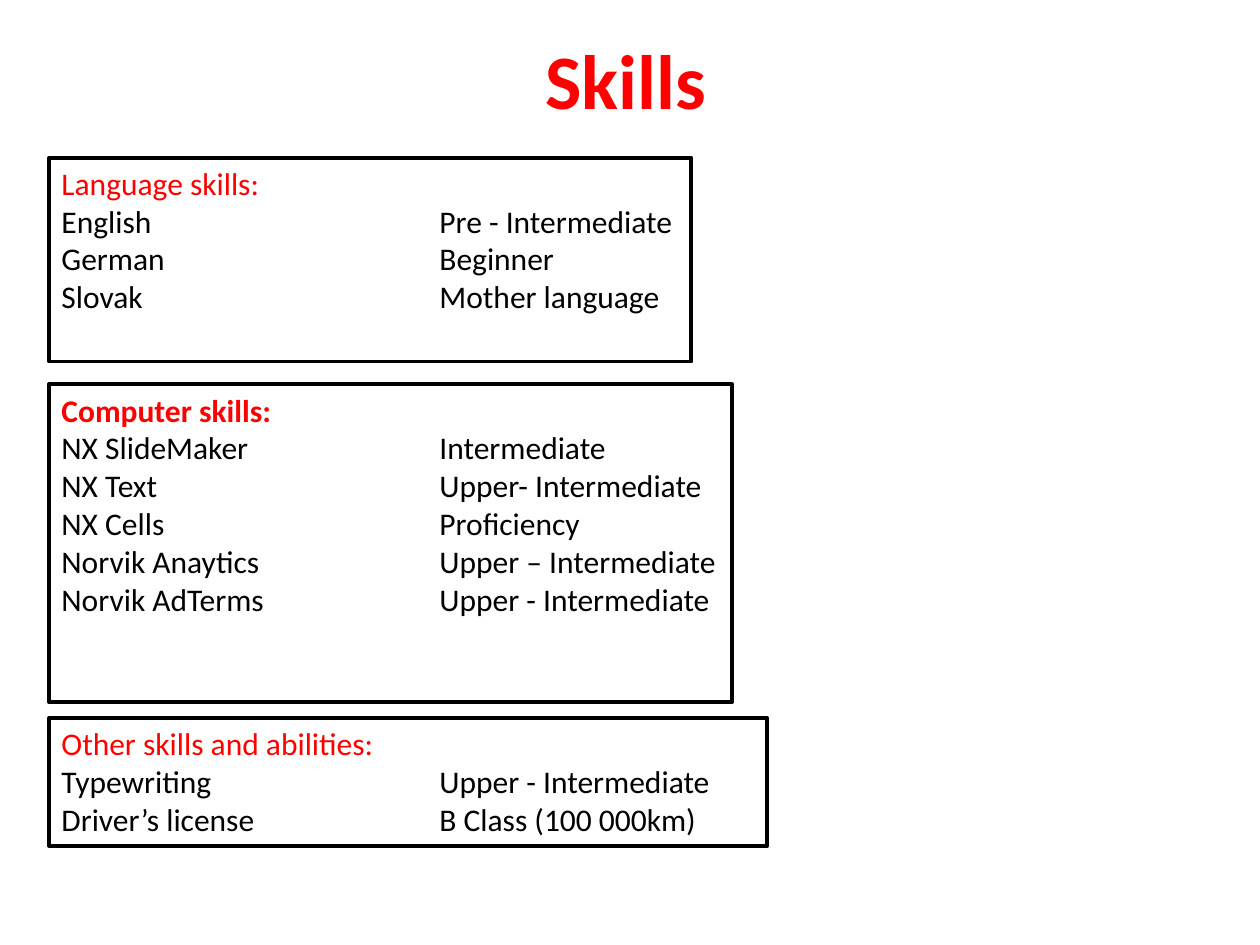
from lxml import etree
from pptx import Presentation
from pptx.dml.color import RGBColor
from pptx.enum.text import MSO_ANCHOR, MSO_AUTO_SIZE, PP_ALIGN
from pptx.oxml.ns import qn
from pptx.util import Cm, Pt

CENTER = PP_ALIGN.CENTER
TOP = MSO_ANCHOR.TOP
MIDDLE = MSO_ANCHOR.MIDDLE
NO_AUTOSIZE = MSO_AUTO_SIZE.NONE

COLORS = {"heading": "FF0000", "text": "000000", "border": "000000"}
FONT = "Calibri"
LEFT = Cm(0.99)
LEVEL_TAB = Cm(7.62)

SECTIONS = [
    {
        "heading": "Language skills:", "bold": False,
        "top": Cm(3.18), "width": Cm(12.95), "height": Cm(4.11),
        "skills": [
            ("English", "Pre - Intermediate"),
            ("German", "Beginner"),
            ("Slovak", "Mother language"),
        ],
    },
    {
        "heading": "Computer skills:", "bold": True,
        "top": Cm(7.75), "width": Cm(13.77), "height": Cm(6.4),
        "skills": [
            ("NX SlideMaker", "Intermediate"),
            ("NX Text", "Upper- Intermediate"),
            ("NX Cells", "Proficiency"),
            ("Norvik Anaytics", "Upper – Intermediate"),
            ("Norvik AdTerms", "Upper - Intermediate"),
        ],
    },
    {
        "heading": "Other skills and abilities:", "bold": False,
        "top": Cm(14.48), "width": Cm(14.48), "height": Cm(2.57),
        "skills": [
            ("Typewriting", "Upper - Intermediate"),
            ("Driver’s license", "B Class (100\u00a0000km)"),
        ],
    },
]


def color(name):
    return RGBColor.from_string(COLORS[name])


def format_paragraph(paragraph, size, color_name, bold=False):
    font = paragraph.font
    font.name = FONT
    font.size = Pt(size)
    font.bold = bold
    font.color.rgb = color(color_name)


def add_level_tab(paragraph):
    properties = paragraph._p.get_or_add_pPr()
    tabs = etree.Element(qn("a:tabLst"))
    etree.SubElement(tabs, qn("a:tab"), pos=str(LEVEL_TAB), algn="l")
    properties.insert(0, tabs)


def set_title(page, text):
    title = page.shapes.title
    title.left, title.top = Cm(1.19), Cm(0)
    title.width, title.height = Cm(22.86), Cm(3.18)
    frame = title.text_frame
    frame.text = text
    frame.vertical_anchor = MIDDLE
    paragraph = frame.paragraphs[0]
    paragraph.alignment = CENTER
    format_paragraph(paragraph, 44, "heading", bold=True)


def add_section(page, section):
    box = page.shapes.add_textbox(
        LEFT, section["top"], section["width"], section["height"])
    box.line.color.rgb = color("border")
    box.line.width = Pt(2.25)
    frame = box.text_frame
    frame.word_wrap = True
    frame.auto_size = NO_AUTOSIZE
    frame.vertical_anchor = TOP
    heading = frame.paragraphs[0]
    heading.text = section["heading"]
    format_paragraph(heading, 18, "heading", section["bold"])
    for skill, level in section["skills"]:
        paragraph = frame.add_paragraph()
        paragraph.text = f"{skill}\t{level}"
        format_paragraph(paragraph, 18, "text")
        add_level_tab(paragraph)


def main():
    deck = Presentation()
    deck.slide_width, deck.slide_height = Cm(25.4), Cm(19.05)
    page = deck.slides.add_slide(deck.slide_layouts[5])
    set_title(page, "Skills")
    for section in SECTIONS:
        add_section(page, section)
    deck.save("out.pptx")


if __name__ == "__main__":
    main()
